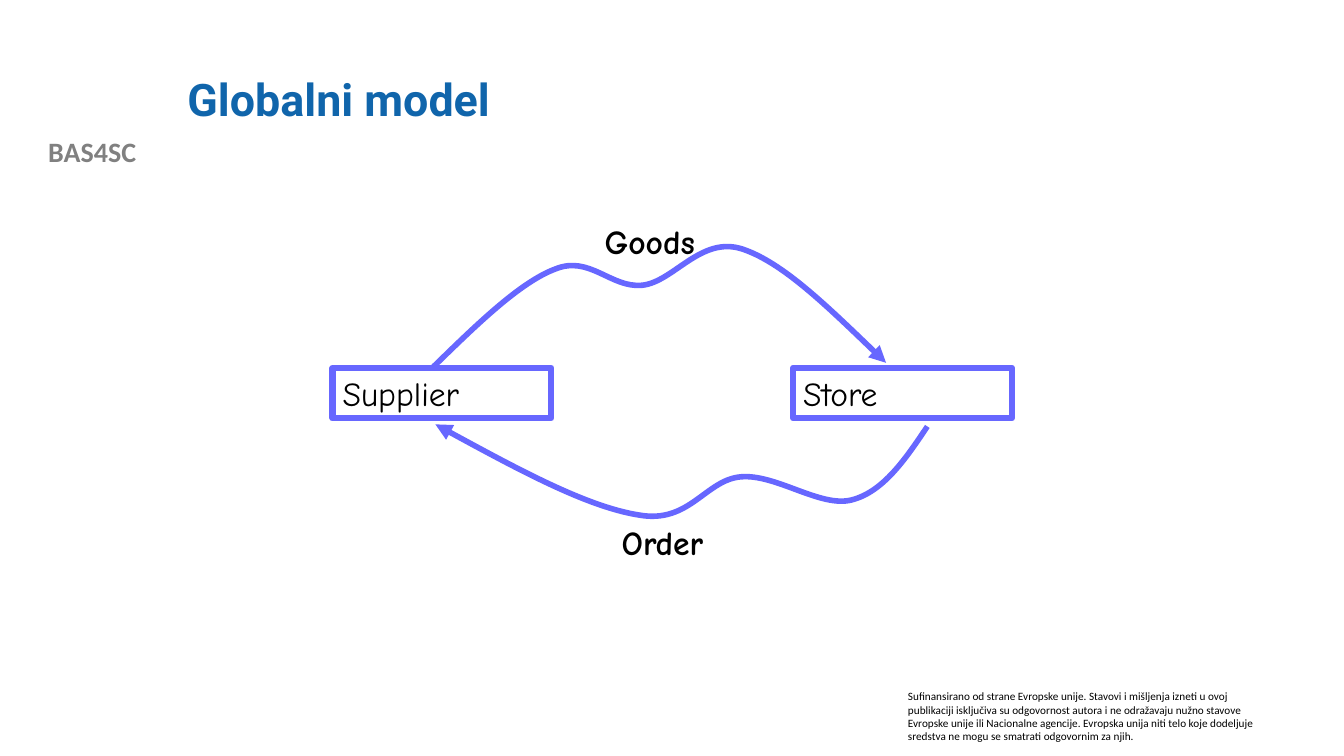
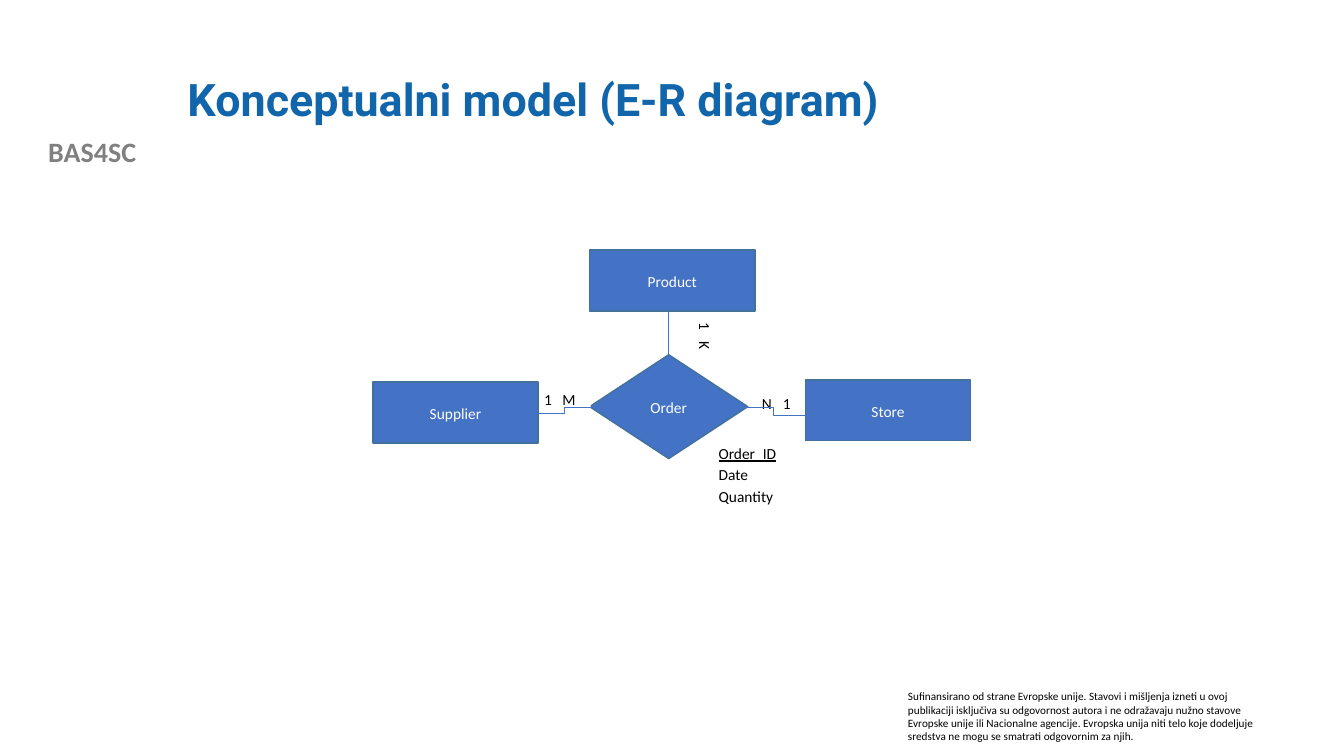
from lxml import etree
from pptx import Presentation
from pptx.dml.color import RGBColor
from pptx.enum.shapes import MSO_CONNECTOR, MSO_SHAPE
from pptx.enum.text import MSO_ANCHOR, PP_ALIGN
from pptx.oxml.ns import qn
from pptx.util import Pt

BLACK = RGBColor(0x00, 0x00, 0x00)
WHITE = RGBColor(0xFF, 0xFF, 0xFF)
GRAY = RGBColor(0x80, 0x80, 0x80)
TITLE_BLUE = RGBColor(0x10, 0x65, 0xAB)
VIOLET = RGBColor(0x67, 0x67, 0xFF)
BLUE = RGBColor(0x44, 0x72, 0xC4)
DARK_BLUE = RGBColor(0x42, 0x71, 0x9B)

LEFT, CENTER = PP_ALIGN.LEFT, PP_ALIGN.CENTER
TOP, MIDDLE = MSO_ANCHOR.TOP, MSO_ANCHOR.MIDDLE
RECTANGLE = MSO_SHAPE.RECTANGLE
PROCESS, DECISION = MSO_SHAPE.FLOWCHART_PROCESS, MSO_SHAPE.FLOWCHART_DECISION
STRAIGHT, ELBOW = MSO_CONNECTOR.STRAIGHT, MSO_CONNECTOR.ELBOW

BODY_FONT, TITLE_FONT, SKETCH_FONT = "Calibri", "Roboto", "Comic Neue"
PROJECT = "BAS4SC"
DISCLAIMER = (
    "Sufinansirano od strane Evropske unije. Stavovi i mišljenja izneti u ovoj "
    "publikaciji isključiva su odgovornost autora i ne odražavaju nužno stavove "
    "Evropske unije ili Nacionalne agencije. Evropska unija niti telo koje dodeljuje "
    "sredstva ne mogu se smatrati odgovornim za njih."
)


def write(frame, text, size=11, font=BODY_FONT, color=BLACK, bold=False,
          align=LEFT, anchor=TOP, spacing=1.0, tab=None):
    """Fill a text frame, one paragraph per line of text."""
    frame.word_wrap = True
    frame.vertical_anchor = anchor
    for index, line in enumerate(text.split("\n")):
        paragraph = frame.add_paragraph() if index else frame.paragraphs[0]
        paragraph.alignment = align
        paragraph.line_spacing = spacing
        if tab:
            tabs = etree.SubElement(paragraph._p.get_or_add_pPr(), qn("a:tabLst"))
            etree.SubElement(tabs, qn("a:tab"), pos=str(Pt(tab)), algn="l")
        run = paragraph.add_run()
        run.text = line
        run.font.size = Pt(size)
        run.font.name = font
        run.font.bold = bold
        run.font.color.rgb = color


class Deck:
    """Hold the shared style and the slide being drawn."""

    def __init__(self):
        self.presentation = Presentation()
        self.presentation.slide_width = Pt(960)
        self.presentation.slide_height = Pt(540)
        self.slide = None

    def add_slide(self, title):
        """Start a slide with its title, project name and disclaimer."""
        layout = self.presentation.slide_layouts[5]
        self.slide = self.presentation.slides.add_slide(layout)
        placeholder = self.slide.shapes.title
        placeholder.left, placeholder.top = Pt(126.7), Pt(28.8)
        placeholder.width, placeholder.height = Pt(767.5), Pt(87.8)
        write(placeholder.text_frame, title, size=32, font=TITLE_FONT,
              color=TITLE_BLUE, bold=True, anchor=MIDDLE, spacing=0.9)
        self.text(PROJECT, 0, 92.2, 131.8, 31, size=20, color=GRAY, bold=True, align=CENTER)
        self.text(DISCLAIMER, 641.5, 488.9, 269.3, 46, size=8)

    def text(self, text, left, top, width, height, **style):
        """Add a text box."""
        box = self.slide.shapes.add_textbox(Pt(left), Pt(top), Pt(width), Pt(height))
        write(box.text_frame, text, **style)

    def box(self, text, left, top, width, height, kind=RECTANGLE, fill=None,
            line=None, line_width=1, **style):
        """Add a preset shape with text."""
        shape = self.slide.shapes.add_shape(kind, Pt(left), Pt(top), Pt(width), Pt(height))
        self.paint(shape, fill, line, line_width)
        write(shape.text_frame, text, **style)
        return shape

    def paint(self, shape, fill, line, line_width):
        """Set the fill and outline of a shape and drop its shadow."""
        shape.shadow.inherit = False
        if fill is None:
            shape.fill.background()
        else:
            shape.fill.solid()
            shape.fill.fore_color.rgb = fill
        if line is None:
            shape.line.fill.background()
        else:
            shape.line.color.rgb = line
            shape.line.width = Pt(line_width)

    def sketch_box(self, text, left):
        """Add a hand-drawn style box of the global model."""
        self.box(text, left, 262.8, 156.2, 36, line=VIOLET, line_width=4.5,
                 size=24, font=SKETCH_FONT)

    def sketch_label(self, text, left, top):
        """Add a bold label next to a curved arrow."""
        self.text(text, left, top, 85, 36.7, size=24, font=SKETCH_FONT, bold=True)

    def curved_arrow(self, start, *points):
        """Draw an arrow along Bezier segments of three points each."""
        builder = self.slide.shapes.build_freeform(Pt(start[0]), Pt(start[1]))
        builder.add_line_segments([(Pt(x), Pt(y)) for x, y in points], close=False)
        shape = builder.convert_to_shape()
        self.paint(shape, None, VIOLET, 4)
        outline = shape.element.find(".//" + qn("a:path"))
        segments = outline.findall(qn("a:lnTo"))
        for first in range(0, len(segments), 3):
            curve = etree.SubElement(outline, qn("a:cubicBezTo"))
            for segment in segments[first:first + 3]:
                curve.append(segment[0])
                outline.remove(segment)
        line = shape.element.spPr.find(qn("a:ln"))
        etree.SubElement(line, qn("a:tailEnd"), type="triangle")

    def node(self, text, left, top, width=118, height=43.4, kind=PROCESS):
        """Add a blue node of the E-R diagram."""
        self.box(text, left, top, width, height, kind=kind, fill=BLUE, line=DARK_BLUE,
                 color=WHITE, align=CENTER, anchor=MIDDLE, spacing=1.07)

    def note(self, text, left, top, width, height, tab=None):
        """Add a white note of the E-R diagram."""
        return self.box(text, left, top, width, height, fill=WHITE, spacing=1.15, tab=tab)

    def link(self, start_x, start_y, end_x, end_y, kind=ELBOW):
        """Add a thin line between two nodes."""
        connector = self.slide.shapes.add_connector(
            kind, Pt(start_x), Pt(start_y), Pt(end_x), Pt(end_y))
        connector.line.color.rgb = BLUE
        connector.line.width = Pt(0.5)
        etree.SubElement(connector.element.spPr, qn("a:effectLst"))


def add_global_model(deck):
    """Draw the flow of goods and orders."""
    deck.add_slide("Globalni model")
    deck.sketch_box("Supplier", 237.6)
    deck.sketch_box("Store", 566.6)
    deck.curved_arrow(
        (309.6, 262),
        (340.6, 231.8), (371.5, 201.6), (396.7, 192.2),
        (421.2, 182.2), (436.3, 205.9), (458.6, 203.8),
        (481, 201.6), (500.4, 168.5), (529.9, 177.8),
        (558.7, 187.2), (595.4, 223.2), (632.9, 259.2))
    deck.curved_arrow(
        (662.4, 304.6),
        (646.6, 328.3), (630.7, 351.4), (608.4, 357.1),
        (586.1, 362.9), (554.4, 338.4), (529.2, 340.6),
        (504, 342.7), (492.5, 374.4), (456.5, 367.9),
        (419.8, 362.2), (365, 332.6), (311, 303.1))
    deck.sketch_label("Goods", 424.8, 154.1)
    deck.sketch_label("Order", 437, 369.4)


def add_conceptual_model(deck):
    """Draw the E-R diagram."""
    deck.add_slide("Konceptualni model (E-R diagram)")
    deck.note("N\t1", 537.1, 275.8, 38.2, 22.3, tab=15)
    deck.node("Order", 421.2, 253.4, 113, 74.2, kind=DECISION)
    deck.note("1\tM", 381.6, 272.9, 40.3, 22.3, tab=13)
    deck.node("Supplier", 266.4, 272.9)
    deck.link(383.8, 295.2, 422.6, 290.9)
    deck.link(528.5, 290.9, 576, 296.6)
    deck.node("Store", 575.3, 271.4)
    attributes = deck.note("Order_ID\nDate\nQuantity", 506.2, 311.8, 67, 49.7)
    attributes.text_frame.paragraphs[0].runs[0].font.underline = True
    deck.link(477.6, 221.8, 477.6, 253.4, kind=STRAIGHT)
    deck.node("Product", 421.2, 178.6)
    deck.note("1\tK", 486.7, 231.1, 36.7, 21.6, tab=13).rotation = 90


def main():
    """Build and save the presentation."""
    deck = Deck()
    add_global_model(deck)
    add_conceptual_model(deck)
    deck.presentation.save("out.pptx")


if __name__ == "__main__":
    main()
